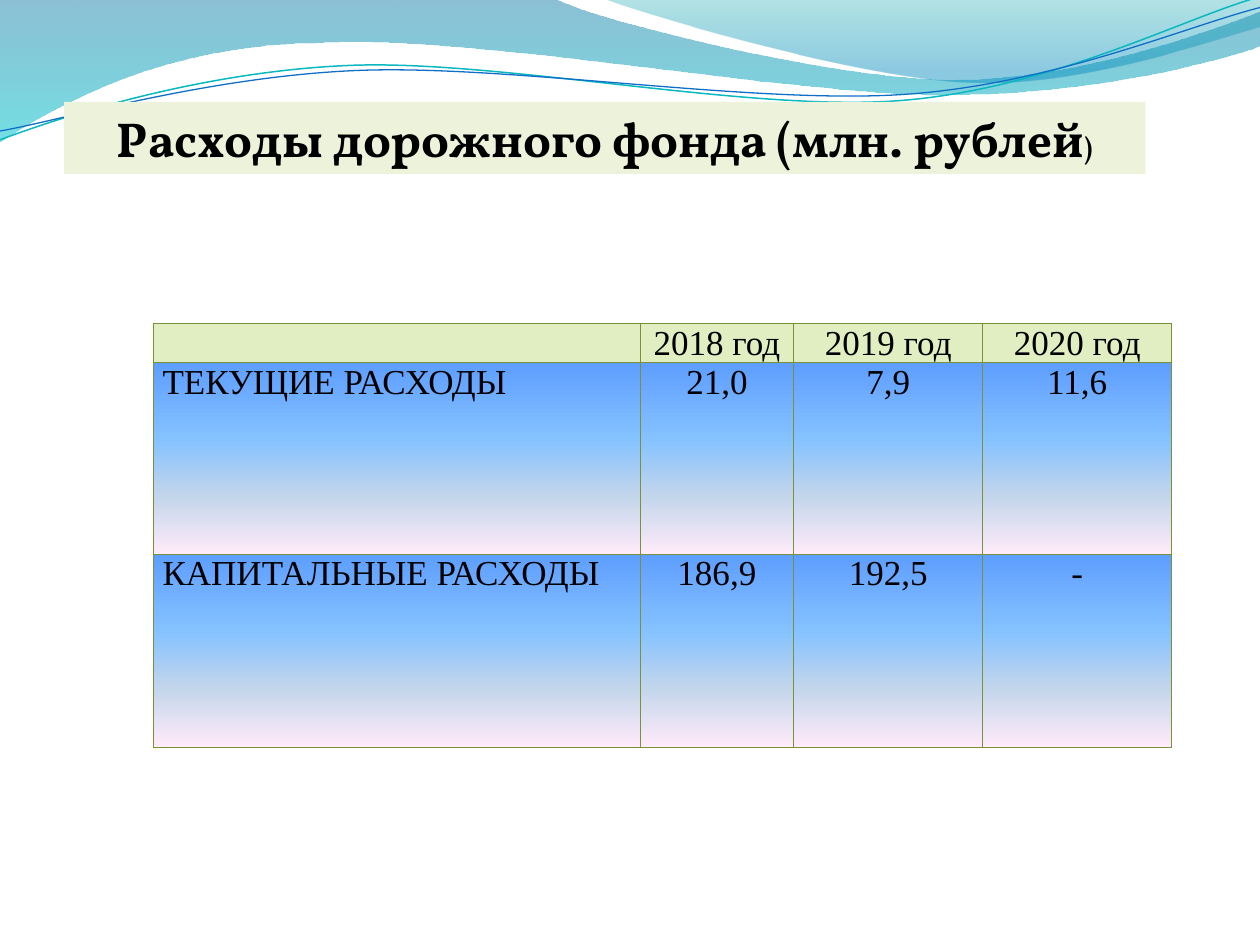
from dataclasses import dataclass

from lxml.etree import SubElement
from pptx import Presentation
from pptx.dml.color import RGBColor
from pptx.enum.shapes import MSO_SHAPE
from pptx.enum.text import MSO_ANCHOR, PP_ALIGN
from pptx.oxml.ns import qn
from pptx.util import Inches, Pt

Point = tuple[float, float]
BORDER_COLOR = "7B9135"
BORDER_SIDES = ("a:lnL", "a:lnR", "a:lnT", "a:lnB")


@dataclass
class GradientStop:
    position: int
    color: str
    opacity: int = 100


@dataclass
class Wave:
    """Each segment lists the points after the current one: one for a line, three for a curve."""
    start: Point
    segments: list[list[Point]]
    stops: tuple[GradientStop, ...] = ()
    line_color: str = ""
    line_width: float = 0


WAVES = [
    Wave((0, -0.01), [
        [(4.4, -0.01)],
        [(4.76, 0.17), (6.64, 0.63), (7.58, 0.63)],
        [(8.53, 0.63), (9.58, 0.26), (10, 0.09)],
        [(10.01, 0.36)],
        [(9.83, 0.44), (8.7, 0.76), (7.46, 0.75)],
        [(6.22, 0.75), (3.82, 0.28), (2.57, 0.34)],
        [(1.29, 0.35), (0.46, 0.83), (-0.01, 1.13)],
        [(0, -0.01)],
    ], stops=(GradientStop(0, "0074A1", 45), GradientStop(100, "00C6CF", 55))),
    Wave((4.79, -0.01), [
        [(5.09, 0.11), (6.82, 0.62), (7.69, 0.65)],
        [(8.56, 0.69), (9.61, 0.32), (10, 0.21)],
        [(10, 0)],
        [(4.79, -0.01)],
    ], stops=(GradientStop(0, "00A1A9", 30), GradientStop(80, "008BBF", 45))),
    Wave((0, 1.11), [
        [(0.48, 0.93), (1.58, 0.57), (2.77, 0.52)],
        [(3.95, 0.47), (5.93, 0.89), (7.13, 0.8)],
        [(8.33, 0.71), (9.38, 0.15), (9.98, -0.02)],
    ], line_color="0AB8BF", line_width=0.85),
    Wave((0, 1.04), [
        [(0.47, 0.96), (1.64, 0.61), (2.83, 0.56)],
        [(4.03, 0.51), (5.97, 0.83), (7.17, 0.75)],
        [(8.36, 0.67), (9.41, 0.21), (10, 0.06)],
    ], line_color="0F6FC6", line_width=0.75),
]

CELL_STOPS = (GradientStop(0, "5E9EFF"), GradientStop(40, "85C2FF"),
              GradientStop(70, "C4D6EB"), GradientStop(100, "FFEBFA"))
COLUMN_WIDTHS = (3.86, 1.22, 1.5, 1.5)
ROW_HEIGHTS = (0.31, 1.52, 1.53)
EXPENSES = [
    ("", "2018 год", "2019 год", "2020 год"),
    ("ТЕКУЩИЕ РАСХОДЫ", "21,0", "7,9", "11,6"),
    ("КАПИТАЛЬНЫЕ РАСХОДЫ", "186,9", "192,5", "-"),
]


def rgb(color: str) -> RGBColor:
    return RGBColor.from_string(color)


def set_solid(fill, color: str) -> None:
    fill.solid()
    fill.fore_color.rgb = rgb(color)


def add_run(paragraph, text: str, font_format: dict) -> None:
    run = paragraph.add_run()
    run.text = text
    for name, value in font_format.items():
        setattr(run.font, name, value)
    run.font.color.rgb = rgb("000000")


def set_gradient(fill, properties, stops: tuple[GradientStop, ...]) -> None:
    """Fill from top to bottom; properties is the XML element that holds the fill."""
    fill.gradient()
    fill.gradient_angle = 270
    stop_list = properties.find(qn("a:gradFill")).find(qn("a:gsLst"))
    for default_stop in list(stop_list):
        stop_list.remove(default_stop)
    for stop in stops:
        element = SubElement(stop_list, qn("a:gs"), pos=str(stop.position * 1000))
        color = SubElement(element, qn("a:srgbClr"), val=stop.color)
        if stop.opacity < 100:
            SubElement(color, qn("a:alpha"), val=str(stop.opacity * 1000))


def bend_segments(shape, segments: list[list[Point]]) -> None:
    """Turn each run of three line segments that stands for a curve into a cubic Bezier."""
    lines = iter(list(shape._element.iter(qn("a:lnTo"))))
    for segment in segments:
        group = [next(lines) for _ in segment]
        if len(group) == 3:
            curve = group[0].makeelement(qn("a:cubicBezTo"), {})
            group[0].addprevious(curve)
            for line in group:
                curve.append(line[0])
                line.getparent().remove(line)


def add_wave(slide, wave: Wave) -> None:
    points = [wave.start, *(point for segment in wave.segments for point in segment)]
    vertices = [(Inches(x), Inches(y)) for x, y in points]
    builder = slide.shapes.build_freeform(*vertices[0])
    builder.add_line_segments(vertices[1:], close=bool(wave.stops))
    shape = builder.convert_to_shape()
    bend_segments(shape, wave.segments)
    shape.shadow.inherit = False
    if wave.stops:
        set_gradient(shape.fill, shape._element.spPr, wave.stops)
        shape.line.fill.background()
    else:
        shape.fill.background()
        shape.line.color.rgb = rgb(wave.line_color)
        shape.line.width = Pt(wave.line_width)


def set_borders(properties) -> None:
    for index, side in enumerate(BORDER_SIDES):
        line = properties.makeelement(qn(side), {"w": str(Pt(0.75))})
        fill = SubElement(line, qn("a:solidFill"))
        SubElement(fill, qn("a:srgbClr"), val=BORDER_COLOR)
        properties.insert(index, line)


def add_expense_table(slide) -> None:
    frame = slide.shapes.add_table(
        len(ROW_HEIGHTS), len(COLUMN_WIDTHS), Inches(1.22), Inches(2.57),
        Inches(sum(COLUMN_WIDTHS)), Inches(sum(ROW_HEIGHTS)))
    table = frame.table
    for column, width in zip(table.columns, COLUMN_WIDTHS):
        column.width = Inches(width)
    for row, height in zip(table.rows, ROW_HEIGHTS):
        row.height = Inches(height)

    margins = {"margin_left": Inches(0.07), "margin_right": Inches(0.07),
               "margin_top": 0, "margin_bottom": 0}
    font_format = {"name": "Times New Roman", "size": Pt(20), "bold": False}
    for row_index, texts in enumerate(EXPENSES):
        for column_index, text in enumerate(texts):
            cell = table.cell(row_index, column_index)
            for name, value in margins.items():
                setattr(cell, name, value)
            properties = cell._tc.get_or_add_tcPr()
            if row_index:
                set_gradient(cell.fill, properties, CELL_STOPS)
            else:
                set_solid(cell.fill, "E1EEC1")
            set_borders(properties)
            if text:
                paragraph = cell.text_frame.paragraphs[0]
                paragraph.alignment = PP_ALIGN.CENTER if column_index else PP_ALIGN.LEFT
                add_run(paragraph, text, font_format)


def add_title(slide) -> None:
    shape = slide.shapes.add_shape(
        MSO_SHAPE.RECTANGLE, Inches(0.51), Inches(0.81), Inches(8.58), Inches(0.57))
    shape.shadow.inherit = False
    set_solid(shape.fill, "EDF3DB")
    shape.line.fill.background()
    shape.text_frame.word_wrap = True
    shape.text_frame.vertical_anchor = MSO_ANCHOR.MIDDLE
    paragraph = shape.text_frame.paragraphs[0]
    paragraph.alignment = PP_ALIGN.CENTER
    for text, size in (("Расходы дорожного фонда (млн. рублей", 28), (")", 16)):
        add_run(paragraph, text, {"name": "Vollkorn", "size": Pt(size), "bold": True})


def main() -> None:
    presentation = Presentation()
    presentation.slide_width = Inches(10)
    presentation.slide_height = Inches(7.5)
    slide = presentation.slides.add_slide(presentation.slide_layouts[6])
    for wave in WAVES:
        add_wave(slide, wave)
    add_expense_table(slide)
    add_title(slide)
    presentation.save("out.pptx")


if __name__ == "__main__":
    main()
